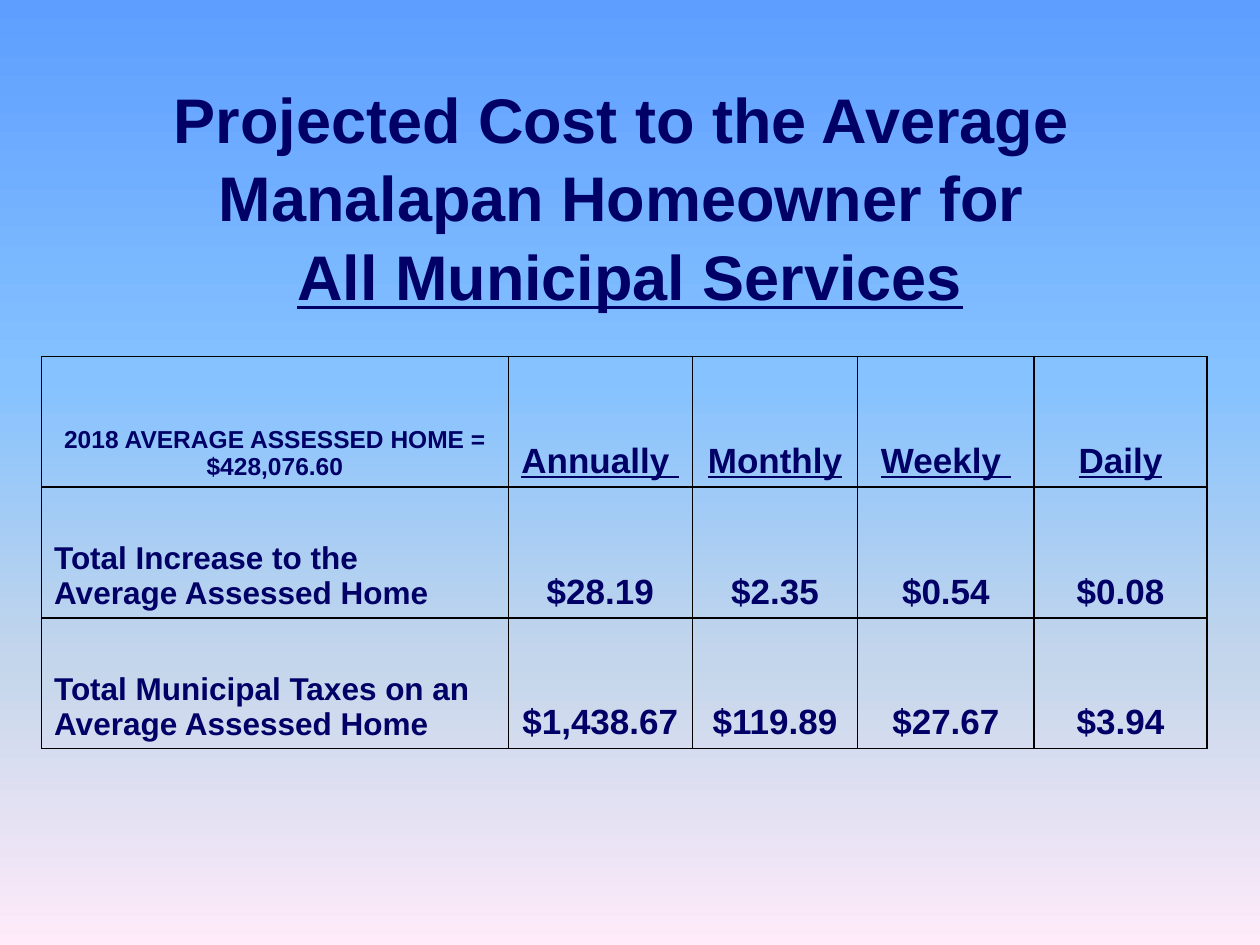
from dataclasses import dataclass

from lxml.etree import SubElement
from pptx import Presentation
from pptx.dml.color import RGBColor as RGB
from pptx.enum.text import MSO_ANCHOR as ANCHOR, PP_ALIGN as ALIGN
from pptx.oxml.ns import qn
from pptx.util import Inches, Pt


@dataclass(frozen=True)
class Theme:
    font: str = "Arial"
    ink: str = "000066"
    border: str = "000000"
    border_width: float = 1
    title: int = 36
    figure: int = 20
    label: int = 18
    note: int = 14
    sky: tuple = ((0, "5E9EFF"), (40, "85C2FF"), (70, "C4D6EB"), (100, "FFEBFA"))


THEME = Theme()
TITLE_LINES = ["Projected Cost to the Average ", "Manalapan Homeowner for ",
               "All Municipal Services"]
COLS = [3.7, 1.46, 1.31, 1.4, 1.37]
ROWS = [
    ["2018 AVERAGE ASSESSED HOME =\n$428,076.60",
     "Annually ", "Monthly ", "Weekly ", "Daily"],
    ["Total Increase to the\nAverage Assessed Home",
     "$28.19", "$2.35", "$0.54", "$0.08"],
    ["Total Municipal Taxes on an\nAverage Assessed Home",
     "$1,438.67", "$119.89", "$27.67", "$3.94"],
]


def add_run(p, text, size, underline=False):
    r = p.add_run()
    r.text = text
    style = {"name": THEME.font, "size": Pt(size), "bold": True, "underline": underline}
    for key, value in style.items():
        setattr(r.font, key, value)
    r.font.color.rgb = RGB.from_string(THEME.ink)


def paint_background(slide):
    fill = slide.background.fill
    fill.gradient()
    fill.gradient_angle = 270
    stops = next(slide.background._cSld.iter(qn("a:gsLst")))
    for stop in list(stops):
        stops.remove(stop)
    for percent, color in THEME.sky:
        stop = SubElement(stops, qn("a:gs"), pos=str(percent * 1000))
        SubElement(stop, qn("a:srgbClr"), val=color)


def add_title(slide, left, top, width, height):
    sp = slide.shapes.title
    box = {"left": left, "top": top, "width": width, "height": height}
    for key, value in box.items():
        setattr(sp, key, Inches(value))
    tf = sp.text_frame
    tf.vertical_anchor = ANCHOR.MIDDLE
    p = tf.paragraphs[0]
    p.alignment = ALIGN.CENTER
    p.line_spacing = 1.04
    last = len(TITLE_LINES) - 1
    for i, line in enumerate(TITLE_LINES):
        add_run(p, line, THEME.title, underline=i == last)
        if i < last:
            p.add_line_break()


def set_borders(cell):
    tc_pr = cell._tc.get_or_add_tcPr()
    for side in ("lnL", "lnR", "lnT", "lnB"):
        ln = SubElement(tc_pr, qn(f"a:{side}"), w=str(Pt(THEME.border_width)))
        SubElement(SubElement(ln, qn("a:solidFill")), qn("a:srgbClr"), val=THEME.border)


def fill_cell(cell, text, size, align, underline):
    set_borders(cell)
    cell.fill.background()
    cell.vertical_anchor = ANCHOR.BOTTOM
    tf = cell.text_frame
    for i, line in enumerate(text.split("\n")):
        p = tf.add_paragraph() if i else tf.paragraphs[0]
        p.alignment = align
        add_run(p, line, size, underline)


def add_cost_table(slide, left, top, width, height):
    frame = slide.shapes.add_table(len(ROWS), len(COLS), Inches(left), Inches(top),
                                   Inches(width), Inches(height))
    table = frame.table
    table.first_row = table.horz_banding = False
    for col, share in zip(table.columns, COLS):
        col.width = Inches(width * share / sum(COLS))
    for i, row in enumerate(ROWS):
        table.rows[i].height = Inches(height / len(ROWS))
        for j, text in enumerate(row):
            header, label = i == 0, j == 0
            size = THEME.figure
            if label:
                size = THEME.note if header else THEME.label
            align = ALIGN.LEFT if label and not header else ALIGN.CENTER
            fill_cell(table.cell(i, j), text, size, align, header and not label)


def main():
    prs = Presentation()
    prs.slide_width, prs.slide_height = Inches(10), Inches(7.5)
    slide = prs.slides.add_slide(prs.slide_layouts[5])
    paint_background(slide)
    add_title(slide, 0.5, 0.6, 9, 1.9)
    add_cost_table(slide, 0.33, 2.83, 9.25, 3.11)
    prs.save("out.pptx")


if __name__ == "__main__":
    main()
